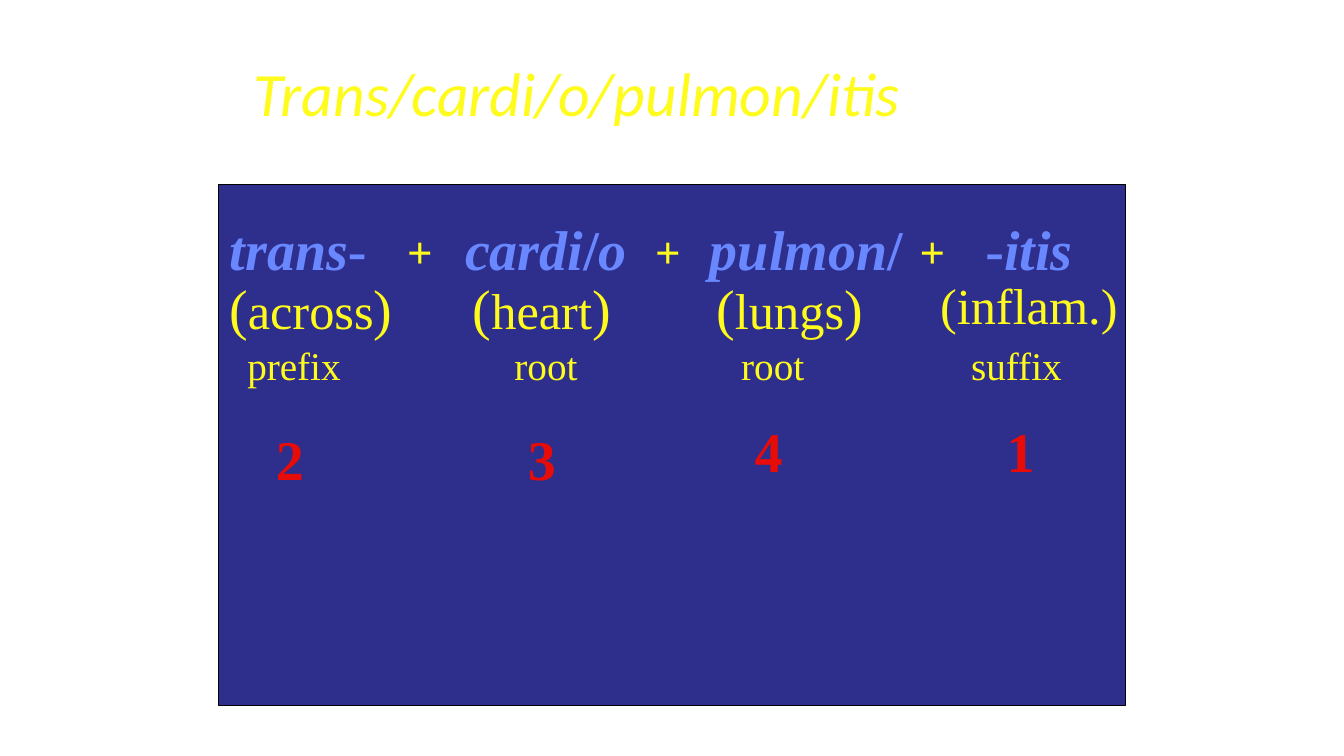
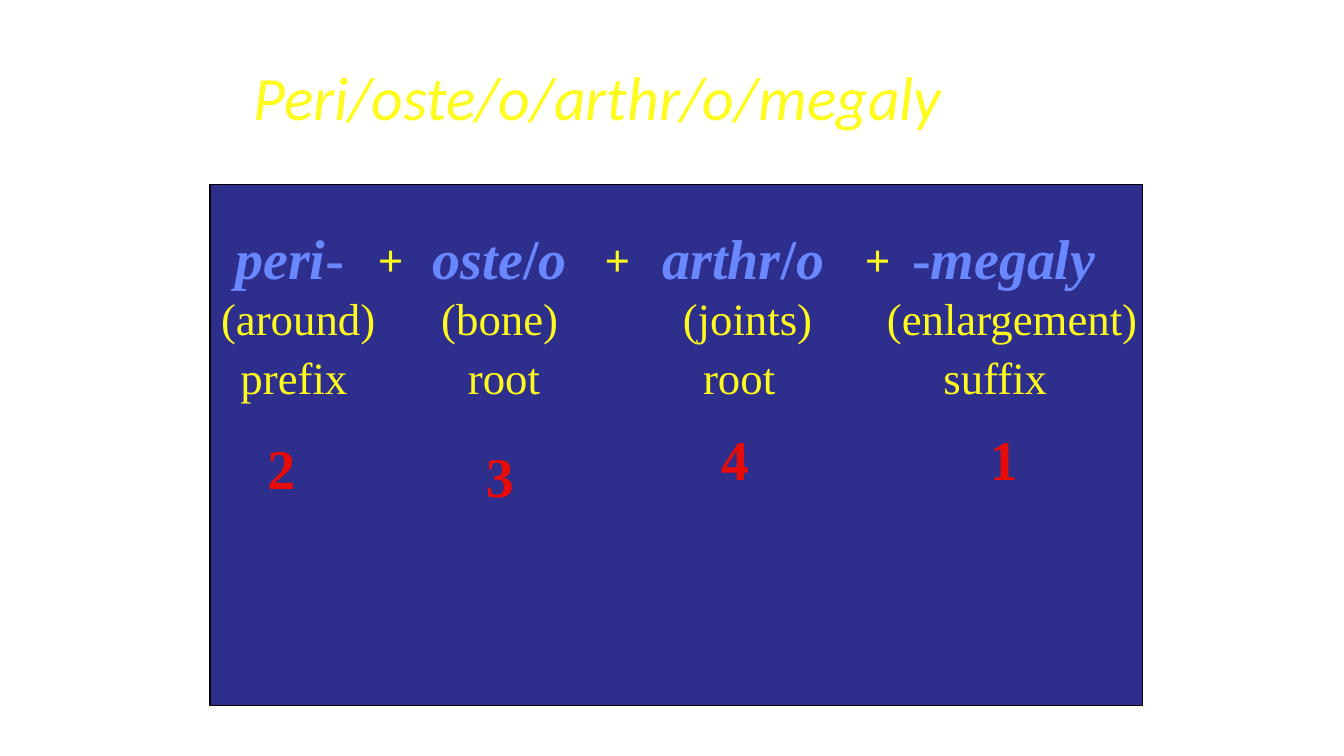
from itertools import groupby

from pptx import Presentation
from pptx.dml.color import RGBColor
from pptx.enum import shapes, text
from pptx.util import Pt

HUES = {"panel": "2E2E8C", "edge": "000000", "yellow": "FFFB1D",
        "term": "6987FF", "order": "E70C07"}
SERIF = "Times New Roman"


def hue(name):
    return RGBColor.from_string(HUES[name])


def style(font, name, size, color, bold=False, italic=False):
    font.name, font.size = name, Pt(size)
    font.color.rgb = hue(color)
    font.bold, font.italic = bold, italic


def add_title(slide, words, height):
    title = slide.shapes.title
    title.left, title.top, title.width, title.height = map(Pt, (174, 18, 612, height))
    frame = title.text_frame
    frame.text = words
    frame.vertical_anchor = text.MSO_ANCHOR.MIDDLE
    frame.auto_size = text.MSO_AUTO_SIZE.NONE
    para = frame.paragraphs[0]
    para.alignment = text.PP_ALIGN.LEFT
    para.line_spacing = 0.9
    style(para.font, "Calibri", 44, "yellow", italic=True)


def add_panel(slide, box):
    panel = slide.shapes.add_shape(shapes.MSO_SHAPE.RECTANGLE, *map(Pt, box))
    panel.shadow.inherit = False
    panel.fill.solid()
    panel.fill.fore_color.rgb = hue("panel")
    panel.line.color.rgb = hue("edge")
    panel.line.width = Pt(0.75)


def add_label(slide, box, cell, size, color, bold=False, slant=False, mark=None):
    """Place a label in the panel box; slant letters or resize marks on demand."""
    words, x, y, width = cell
    label = slide.shapes.add_textbox(Pt(box[0] + x), Pt(box[1] + y), Pt(width),
                                     Pt(1.2 * max(size, mark or 0) + 7.2))
    frame = label.text_frame
    frame.word_wrap = True
    frame.auto_size = text.MSO_AUTO_SIZE.SHAPE_TO_FIT_TEXT
    para = frame.paragraphs[0]
    para.alignment = text.PP_ALIGN.CENTER
    style(para.font, SERIF, size, color, bold)
    parts = groupby(words, str.isalpha) if slant or mark else [(True, words)]
    for alpha, chars in parts:
        run = para.add_run()
        run.text = "".join(chars)
        if slant:
            run.font.italic = alpha
        if mark and not alpha:
            run.font.size = Pt(mark)


def add_word(deck, word):
    slide = deck.slides.add_slide(deck.slide_layouts[5])
    box = word["box"]
    add_panel(slide, box)
    add_title(slide, word["title"], word["head"])
    for cell in word["terms"]:
        add_label(slide, box, cell, 40, "term", bold=True, slant=True)
    for x, width in word["pluses"]:
        add_label(slide, box, ("+", x, word["terms"][0][2] + 6, width),
                  32, "yellow", bold=True)
    for *cell, size, mark in word["senses"]:
        add_label(slide, box, cell, size, "yellow", mark=mark)
    for cell in word["kinds"]:
        add_label(slide, box, cell, word["small"], "yellow")
    for cell in word["orders"]:
        add_label(slide, box, cell, 40, "order", bold=True)


# Cells hold text, x, y and width, measured from the panel's corner;
# senses add the letter size and the bracket size.
WORDS = [
    {
        "title": "Trans/cardi/o/pulmon/itis", "head": 102,
        "box": (156, 132, 648, 372), "small": 28,
        "terms": [("trans-", 0, 18, 114), ("cardi/o", 168, 18, 132),
                  ("pulmon/", 342, 18, 156), ("-itis", 528, 18, 102)],
        "pluses": [(108, 72), (294, 54), (480, 60)],
        "senses": [("(across)", 0, 60, 132, 36, 40), ("(heart)", 144, 60, 174, 36, 40),
                   ("(lungs)", 318, 60, 180, 36, 40),
                   ("(inflam.)", 504, 60, 150, 36, None)],
        "kinds": [("prefix", -12, 108, 132), ("root", 180, 108, 108),
                  ("root", 342, 108, 108), ("suffix", 504, 108, 132)],
        "orders": [("2", 12, 168, 78), ("3", 192, 168, 78),
                   ("4", 354, 162, 78), ("1", 534, 162, 78)],
    },
    {
        "title": "Peri/oste/o/arthr/o/megaly", "head": 108,
        "box": (150, 132, 666, 372), "small": 32,
        "terms": [("peri-", 6, 24, 102), ("oste/o", 150, 24, 114),
                  ("arthr/o", 312, 24, 138), ("-megaly", 492, 24, 150)],
        "pluses": [(108, 42), (270, 42), (456, 42)],
        "senses": [("(around)", 0, 72, 126, 32, None), ("(bone)", 156, 72, 102, 32, None),
                   ("(joints)", 324, 72, 120, 32, None),
                   ("(enlargement)", 474, 72, 198, 32, None)],
        "kinds": [("prefix", 12, 114, 96), ("root", 168, 114, 84),
                  ("root", 336, 114, 84), ("suffix", 516, 114, 90)],
        "orders": [("2", 24, 174, 54), ("3", 168, 180, 78),
                   ("4", 348, 168, 54), ("1", 540, 168, 54)],
    },
]


def main():
    deck = Presentation()
    deck.slide_width, deck.slide_height = Pt(960), Pt(540)
    for word in WORDS:
        add_word(deck, word)
    deck.save("out.pptx")


if __name__ == "__main__":
    main()
